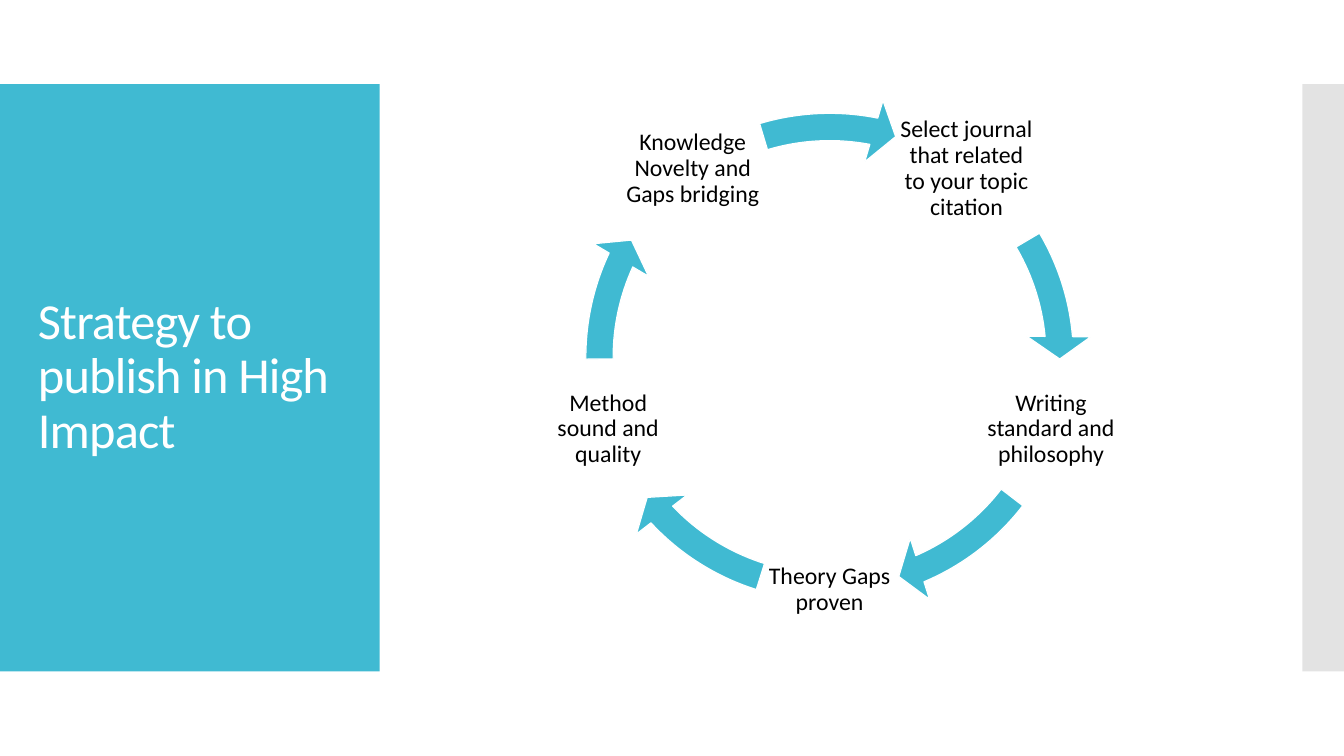
import math
from dataclasses import dataclass

import pptx
import pptx.dml.color
import pptx.enum.shapes
import pptx.enum.text
import pptx.oxml
import pptx.oxml.ns
import pptx.util

Pt = pptx.util.Pt
Shape = pptx.enum.shapes.MSO_SHAPE
Align = pptx.enum.text.PP_ALIGN
TEAL, WHITE, BLACK, GREY = "40BAD2", "FFFFFF", "000000", "C8C8C8"

# Ring geometry in points
MID_X, MID_Y = 592.6, 255.1
ORBIT = 166.3
RING = 374.4
LABEL = 100


@dataclass
class Box:
    left: float
    top: float
    width: float
    height: float

    def size(self) -> tuple:
        return Pt(self.left), Pt(self.top), Pt(self.width), Pt(self.height)


@dataclass
class Step:
    """A label and the arrow leaving it; angles run clockwise from the right."""
    text: str
    tail: float
    head: float


STEPS = [
    Step("Select journal that related to your topic citation", 329.45, 354.88),
    Step("Writing standard and philosophy", 37.57, 66.9),
    Step("Theory Gaps proven", 107.5, 136.83),
    Step("Method sound and quality", 179.52, 204.95),
    Step("Knowledge Novelty and Gaps bridging", 253.32, 281.08),
]


def color(code: str) -> pptx.dml.color.RGBColor:
    return pptx.dml.color.RGBColor.from_string(code)


def centred(x: float, y: float, side: float) -> Box:
    return Box(x - side / 2, y - side / 2, side, side)


def draw(slide, kind, box: Box, fill: str, line: str = "", alpha: int = 100):
    shape = slide.shapes.add_shape(kind, *box.size())
    shape.shadow.inherit = False
    shape.fill.solid()
    shape.fill.fore_color.rgb = color(fill)
    if alpha < 100:
        tint = shape.fill._xPr.find(".//" + pptx.oxml.ns.qn("a:srgbClr"))
        node = pptx.oxml.parse_xml(
            f'<a:alpha {pptx.oxml.ns.nsdecls("a")} val="{alpha * 1000}"/>')
        tint.append(node)
    if line:
        shape.line.color.rgb = color(line)
        shape.line.width = Pt(0.85)
    else:
        shape.line.fill.background()
    return shape


def write(slide, text: str, box: Box, *, size: float, ink: str,
          align=Align.LEFT, inset: tuple = (7.2, 3.6), track: float = 0) -> None:
    frame = slide.shapes.add_textbox(*box.size()).text_frame
    frame.word_wrap = True
    frame.vertical_anchor = pptx.enum.text.MSO_ANCHOR.MIDDLE
    frame.margin_left = frame.margin_right = Pt(inset[0])
    frame.margin_top = frame.margin_bottom = Pt(inset[1])
    para = frame.paragraphs[0]
    para.alignment = align
    para.line_spacing = 0.9
    run = para.add_run()
    run.text = text
    run.font.name = "Calibri"
    run.font.size = Pt(size)
    run.font.color.rgb = color(ink)
    if track:
        run.font._element.set("spc", str(round(track * 100)))


def arrow(slide, step: Step) -> None:
    shape = draw(slide, Shape.CIRCULAR_ARROW, centred(MID_X, MID_Y, RING),
                 TEAL, line=WHITE)
    # One degree is 60000 units, and adjustments count in 100000 units
    values = 0.052, 5.6 * 0.6, step.head * 0.6, step.tail * 0.6, 0.061
    for i, value in enumerate(values):
        shape.adjustments[i] = value


def cycle(slide) -> None:
    for i, step in enumerate(STEPS):
        turn = math.radians(-54 + i * 360 / len(STEPS))
        spot = centred(MID_X + ORBIT * math.cos(turn),
                       MID_Y + ORBIT * math.sin(turn), LABEL)
        write(slide, step.text, spot, size=17, ink=BLACK,
              align=Align.CENTER, inset=(1.5, 1.5))
        arrow(slide, step)


def main() -> None:
    deck = pptx.Presentation()
    deck.slide_width, deck.slide_height = Pt(960), Pt(540)
    slide = deck.slides.add_slide(deck.slide_layouts[6])
    draw(slide, Shape.RECTANGLE, Box(0, 60, 271.2, 419.5), TEAL)
    draw(slide, Shape.RECTANGLE, Box(930.2, 60, 29.8, 419.5), GREY, alpha=50)
    write(slide, "Strategy to publish in High Impact",
          Box(20, 88.5, 232, 362.5), size=36, ink=WHITE, track=-0.6)
    cycle(slide)
    deck.save("out.pptx")


if __name__ == "__main__":
    main()
